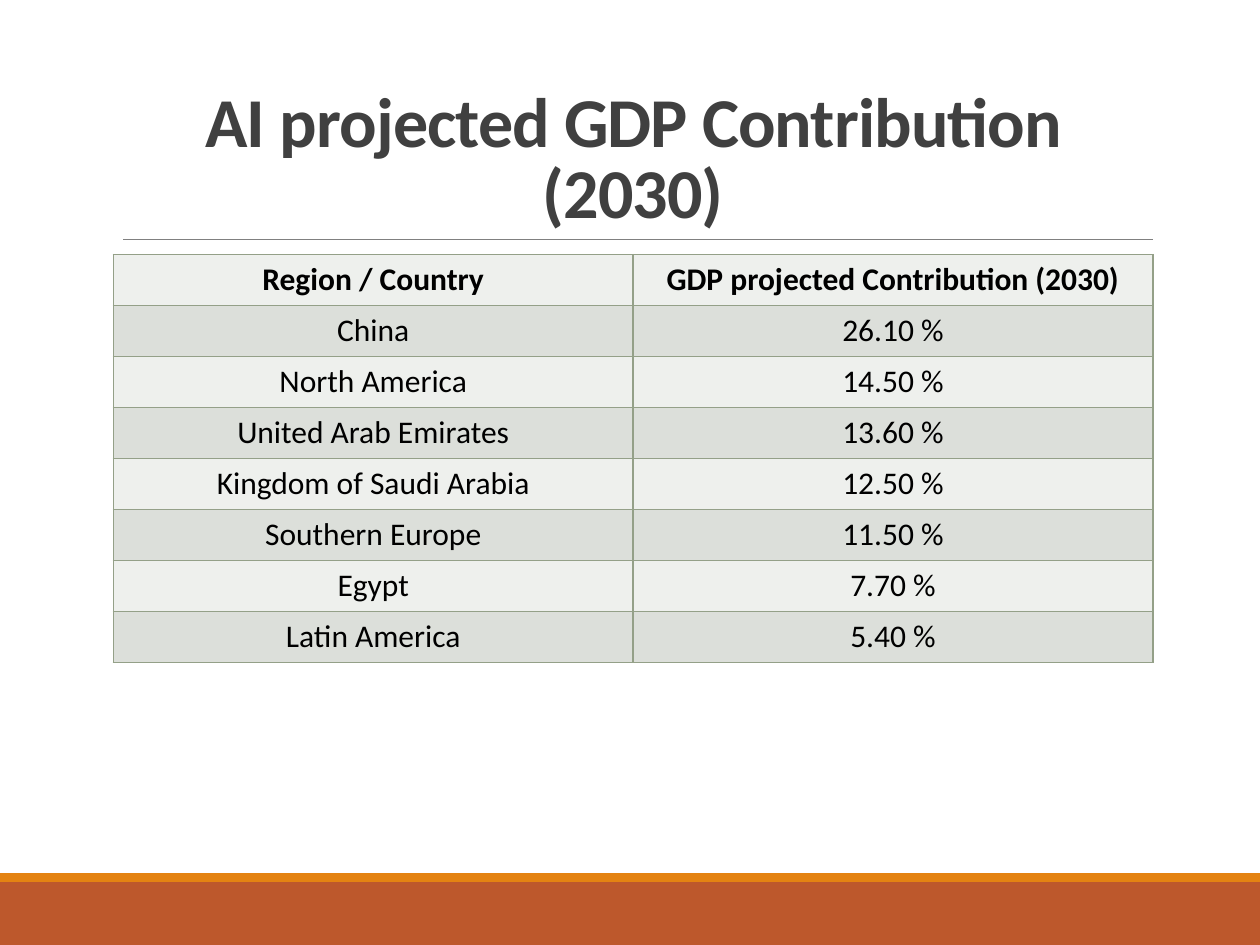
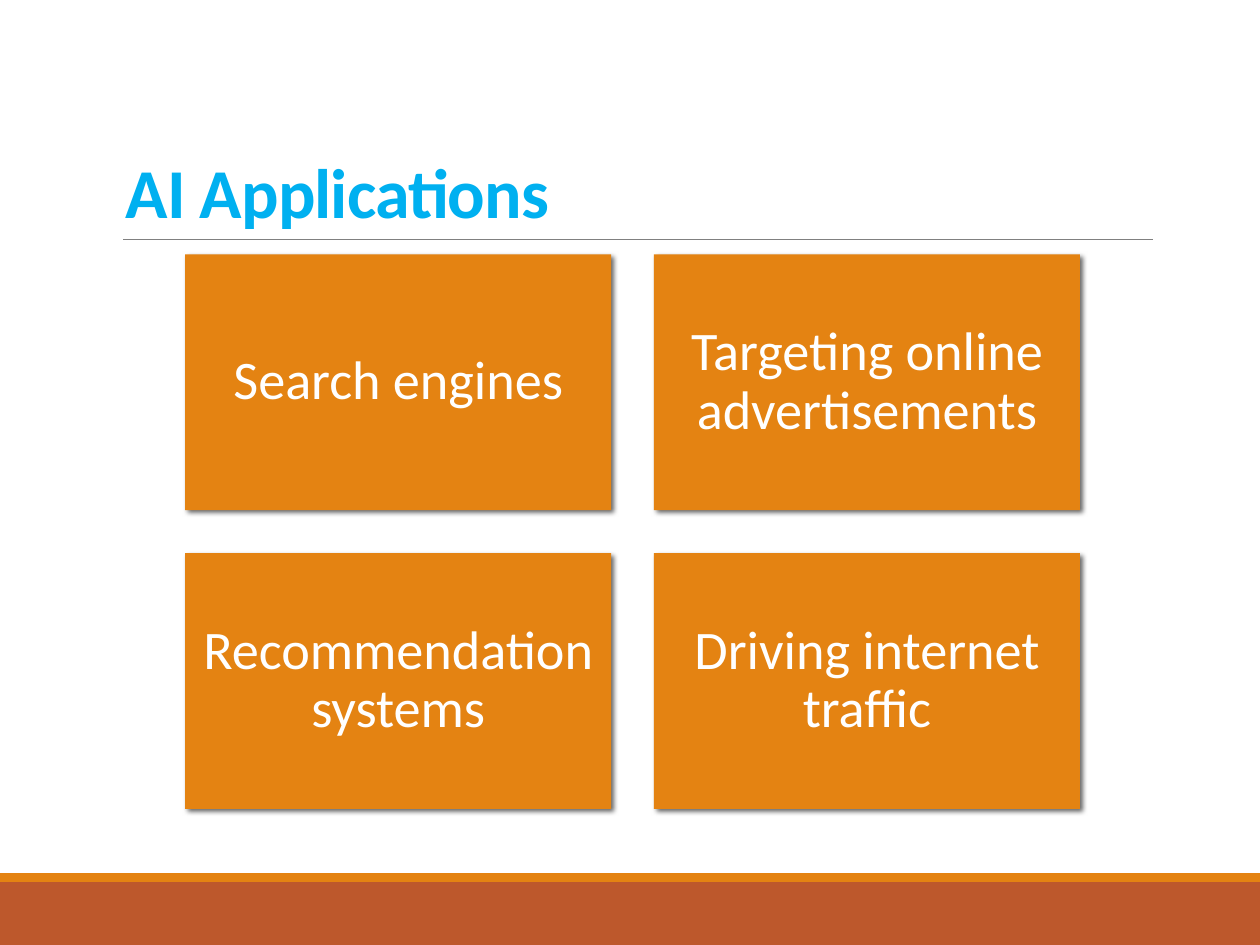
from lxml import etree
from pptx import Presentation
from pptx.dml.color import RGBColor
from pptx.enum.shapes import MSO_CONNECTOR, MSO_SHAPE
from pptx.enum.text import MSO_ANCHOR, PP_ALIGN
from pptx.oxml import parse_xml
from pptx.oxml.ns import nsdecls, qn
from pptx.util import Inches, Pt

RECT = MSO_SHAPE.RECTANGLE
LINE = MSO_CONNECTOR.STRAIGHT
LEFT, CENTER = PP_ALIGN.LEFT, PP_ALIGN.CENTER
MIDDLE, BOTTOM = MSO_ANCHOR.MIDDLE, MSO_ANCHOR.BOTTOM

FONT = "Calibri"
RUST = RGBColor(0xBD, 0x58, 0x2C)
ORANGE = RGBColor(0xE4, 0x83, 0x12)
GRAY = RGBColor(0x80, 0x80, 0x80)
DARK = RGBColor(0x40, 0x40, 0x40)
BLUE = RGBColor(0x00, 0xB0, 0xF0)
BLACK = RGBColor(0x00, 0x00, 0x00)
WHITE = RGBColor(0xFF, 0xFF, 0xFF)
PALE = RGBColor(0xEE, 0xF0, 0xED)
SAGE = RGBColor(0xDC, 0xDF, 0xDA)
BORDER = RGBColor(0x94, 0xA0, 0x88)

WIDE, HIGH = 10, 7.5
TITLE_BOX = (0.9, 0.31, 8.25, 1.59)
TABLE_BOX = (0.9, 2.02, 8.25, 3.24)
CARDS_BOX = (1.47, 2.02, 7.1, 4.4)

ROWS = [
    ("Region / Country", "GDP projected Contribution (2030)"),
    ("China", "26.10 %"),
    ("North America", "14.50 %"),
    ("United Arab Emirates", "13.60 %"),
    ("Kingdom of Saudi Arabia", "12.50 %"),
    ("Southern Europe", "11.50 %"),
    ("Egypt", "7.70 %"),
    ("Latin America", "5.40 %"),
]
USES = [
    "Search engines",
    "Targeting online advertisements",
    "Recommendation systems",
    "Driving internet traffic",
]


def write(frame, text, size, color, bold=False, align=CENTER, space=1.0, track=0):
    para = frame.paragraphs[0]
    para.alignment = align
    para.line_spacing = space
    run = para.add_run()
    run.text = text
    font = run.font
    font.name, font.size, font.bold = FONT, Pt(size), bold
    font.color.rgb = color
    if track:
        run._r.get_or_add_rPr().set("spc", str(track))


def add_rect(slide, box, color):
    rect = slide.shapes.add_shape(RECT, *map(Inches, box))
    rect.shadow.inherit = False
    rect.fill.solid()
    rect.fill.fore_color.rgb = color
    rect.line.fill.background()
    return rect


def add_frame(slide):
    add_rect(slide, (0, HIGH - 0.5, WIDE, 0.5), RUST)
    add_rect(slide, (0, HIGH - 0.57, WIDE, 0.07), ORANGE)
    rule = slide.shapes.add_connector(LINE, *map(Inches, (0.98, 1.9, 9.15, 1.9)))
    rule.line.color.rgb = GRAY
    rule.line.width = Pt(0.5)
    etree.SubElement(rule._element.spPr, qn("a:effectLst"))


def add_title(slide, box, text, color, align):
    frame = slide.shapes.add_textbox(*map(Inches, box)).text_frame
    frame.word_wrap = True
    frame.vertical_anchor = BOTTOM
    write(frame, text, 40, color, bold=True, align=align, space=0.85, track=-50)


def add_border(cell):
    props = cell._tc.get_or_add_tcPr()
    for spot, side in enumerate(("lnL", "lnR", "lnT", "lnB")):
        props.insert(spot, parse_xml(
            f'<a:{side} {nsdecls("a")} w="{Pt(1)}"><a:solidFill>'
            f'<a:srgbClr val="{BORDER}"/></a:solidFill></a:{side}>'))


def add_table(slide, box, rows):
    count, width = len(rows), len(rows[0])
    table = slide.shapes.add_table(count, width, *map(Inches, box)).table
    table.first_row = table.horz_banding = False
    for r, row in enumerate(rows):
        table.rows[r].height = Inches(box[3] / count)
        for c, text in enumerate(row):
            cell = table.cell(r, c)
            cell.fill.solid()
            cell.fill.fore_color.rgb = SAGE if r % 2 else PALE
            add_border(cell)
            write(cell.text_frame, text, 18, BLACK, bold=r == 0)


def add_card(slide, box, text):
    card = add_rect(slide, box, ORANGE)
    glow = card._element.spPr.find(qn("a:effectLst"))
    glow.append(parse_xml(
        f'<a:outerShdw {nsdecls("a")} blurRad="{Pt(3)}" dist="{Pt(2)}" '
        f'dir="{45 * 60000}" algn="ctr" rotWithShape="0"><a:srgbClr val="{BLACK}">'
        '<a:alpha val="60000"/></a:srgbClr></a:outerShdw>'))
    frame = card.text_frame
    frame.word_wrap = True
    frame.vertical_anchor = MIDDLE
    frame.margin_left = frame.margin_right = Inches(0.13)
    frame.margin_top = frame.margin_bottom = Inches(0.13)
    write(frame, text, 31, WHITE, space=0.9)


def add_cards(slide, box, texts, cols=2, gap=0.34):
    left, top, width, height = box
    rows = len(texts) // cols
    wide = (width - gap * (cols - 1)) / cols
    high = (height - gap * (rows - 1)) / rows
    for i, text in enumerate(texts):
        row, col = divmod(i, cols)
        spot = (left + col * (wide + gap), top + row * (high + gap))
        add_card(slide, (*spot, wide, high), text)


def add_slide(deck, title, color, align):
    slide = deck.slides.add_slide(deck.slide_layouts[6])
    add_frame(slide)
    add_title(slide, TITLE_BOX, title, color, align)
    return slide


def main():
    deck = Presentation()
    deck.slide_width, deck.slide_height = Inches(WIDE), Inches(HIGH)
    slide = add_slide(deck, "AI projected GDP Contribution (2030)", DARK, CENTER)
    add_table(slide, TABLE_BOX, ROWS)
    slide = add_slide(deck, "AI Applications", BLUE, LEFT)
    add_cards(slide, CARDS_BOX, USES)
    deck.save("out.pptx")


if __name__ == "__main__":
    main()
